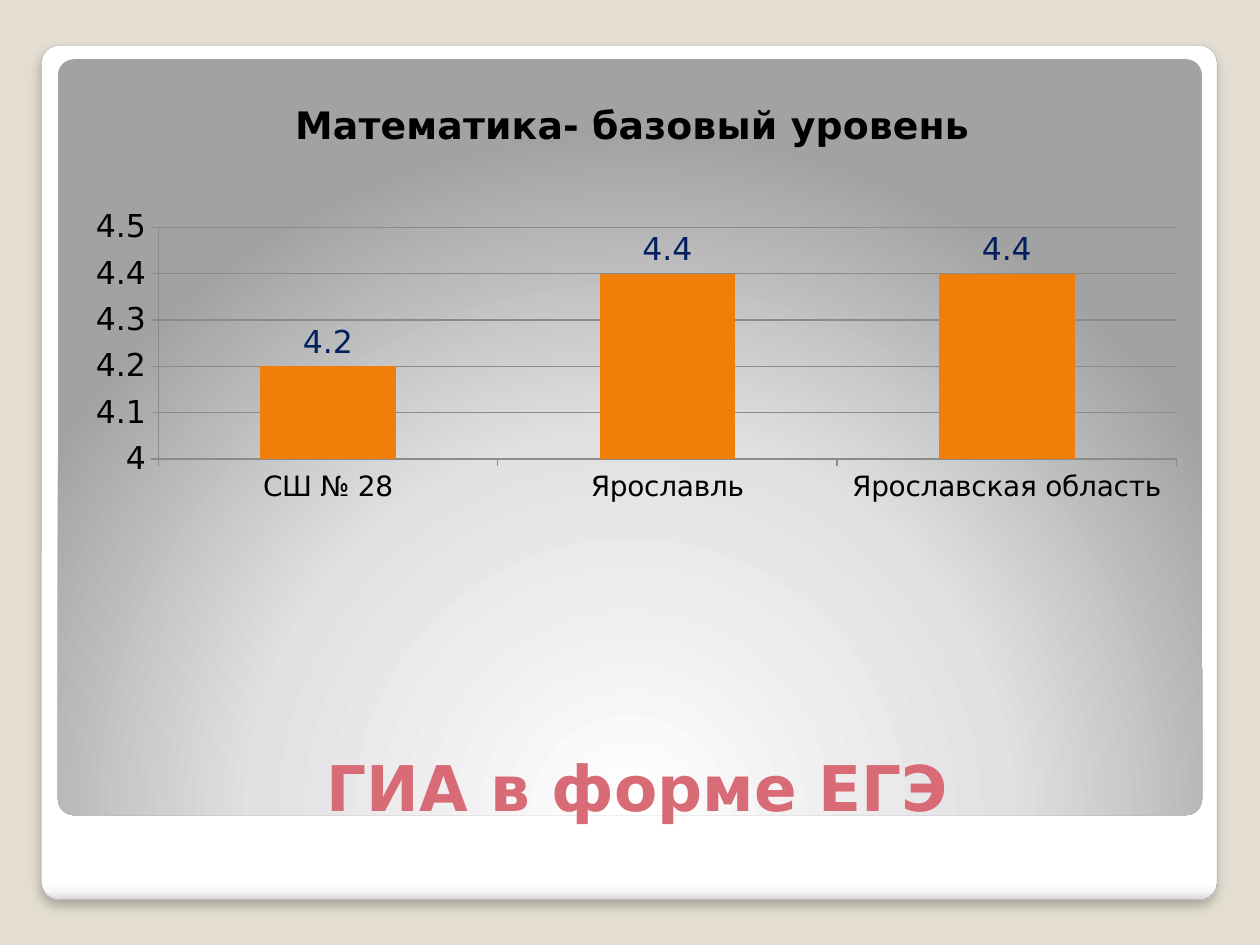
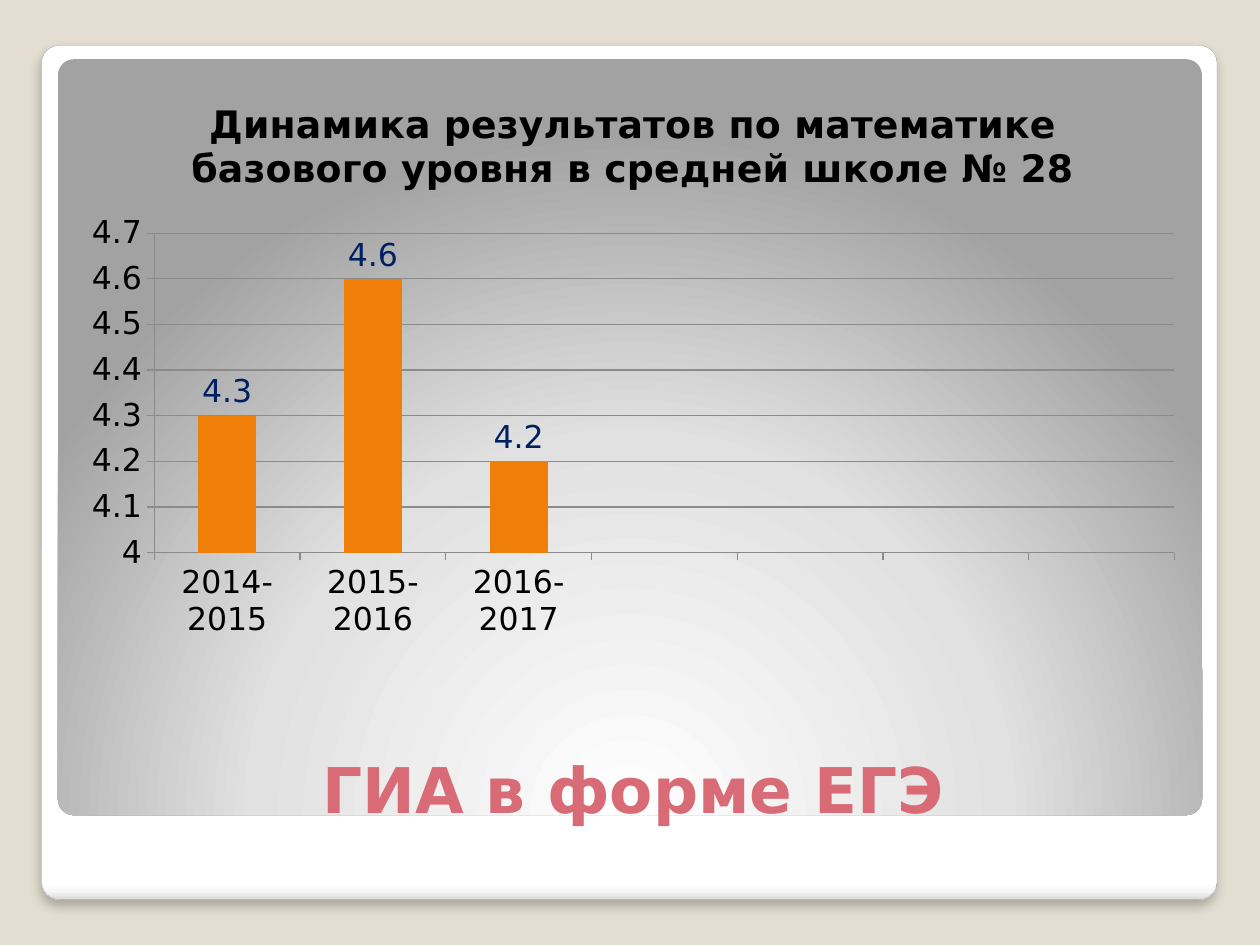
from dataclasses import dataclass
from typing import Optional

from lxml import etree
from pptx import Presentation
from pptx.chart.chart import Chart
from pptx.chart.data import CategoryChartData
from pptx.dml.color import RGBColor
from pptx.enum.chart import XL_CHART_TYPE, XL_LABEL_POSITION, XL_TICK_MARK
from pptx.enum.shapes import MSO_SHAPE
from pptx.enum.text import MSO_ANCHOR, PP_ALIGN
from pptx.oxml import parse_xml
from pptx.oxml.ns import nsdecls, qn
from pptx.presentation import Presentation as Deck
from pptx.shapes.autoshape import Shape
from pptx.slide import Slide
from pptx.util import Inches, Pt

ROUNDED = MSO_SHAPE.ROUNDED_RECTANGLE
COLUMNS = XL_CHART_TYPE.COLUMN_CLUSTERED
OUTSIDE_END = XL_LABEL_POSITION.OUTSIDE_END
TICK_OUTSIDE = XL_TICK_MARK.OUTSIDE
BOTTOM = MSO_ANCHOR.BOTTOM
CENTER = PP_ALIGN.CENTER

FONT = "DejaVu Sans"
SLIDE_TITLE = "ГИА в форме ЕГЭ"
COLORS = {
    "background": "E3DED1",
    "white": "FFFFFF",
    "edge_light": "F7F7F7",
    "edge_dark": "DADADA",
    "outline": "A4A4A4",
    "panel_middle": "E1E1E1",
    "panel_dark": "A2A2A2",
    "title": "D96B77",
    "text": "000000",
    "bar": "F07F09",
    "value": "002060",
    "grid": "8B8B8B",
}
LINEAR_DOWN = '<a:lin ang="5400000" scaled="0"/>'
RADIAL_FROM_BELOW = (
    '<a:path path="circle">'
    '<a:fillToRect l="50000" t="175000" r="50000" b="-75000"/></a:path>'
)


@dataclass(frozen=True)
class Box:
    left: float
    top: float
    width: float
    height: float

    def lengths(self) -> tuple[Inches, Inches, Inches, Inches]:
        return (Inches(self.left), Inches(self.top),
                Inches(self.width), Inches(self.height))


@dataclass(frozen=True)
class Panel:
    box: Box
    stops: tuple[tuple[int, str], ...]
    direction: str
    raised: bool


@dataclass(frozen=True)
class ResultSlide:
    title_box: Box
    chart_box: Box
    chart_title: str
    categories: tuple[str, ...]
    values: tuple[Optional[float], ...]
    maximum: float
    category_size: int
    plot_area: Optional[Box] = None


PANELS = (
    Panel(Box(0.33, 0.36, 9.33, 6.78),
          ((0, "white"), (98, "white"), (99, "edge_light"), (100, "edge_dark")),
          LINEAR_DOWN, True),
    Panel(Box(0.46, 0.47, 9.08, 6),
          ((0, "white"), (55, "panel_middle"), (100, "panel_dark")),
          RADIAL_FROM_BELOW, False),
)
RESULT_SLIDES = (
    ResultSlide(
        Box(0.55, 5.64, 9.02, 0.94), Box(0.55, 0.58, 8.94, 5.3),
        "Математика- базовый уровень",
        ("СШ № 28", "Ярославль", "Ярославская область"),
        (4.2, 4.4, 4.4), 4.5, 16, Box(0.079, 0.231, 0.904, 0.347),
    ),
    ResultSlide(
        Box(0.55, 5.45, 8.95, 1.15), Box(0.55, 0.58, 8.95, 4.58),
        "Динамика результатов по математике базового уровня в средней школе № 28",
        ("2014-2015", "2015-2016", "2016-2017"),
        (4.3, 4.6, 4.2, None, None, None, None), 4.7, 18,
    ),
)


def color(name: str) -> RGBColor:
    return RGBColor.from_string(COLORS[name])


def set_gradient(shape: Shape, panel: Panel) -> None:
    stops = "".join(
        f'<a:gs pos="{position * 1000}"><a:srgbClr val="{COLORS[name]}"/></a:gs>'
        for position, name in panel.stops
    )
    gradient = parse_xml(
        f'<a:gradFill {nsdecls("a")} rotWithShape="1"><a:gsLst>{stops}</a:gsLst>'
        f'{panel.direction}</a:gradFill>'
    )
    shape.fill.background()
    properties = shape.element.spPr
    properties.replace(properties.find(qn("a:noFill")), gradient)


def add_shadow(shape: Shape) -> None:
    effects = shape.element.spPr.find(qn("a:effectLst"))
    shadow = etree.SubElement(
        effects, qn("a:outerShdw"), blurRad=str(Pt(6)), dist=str(Pt(4)),
        dir="5400000", algn="tl", rotWithShape="0",
    )
    tint = etree.SubElement(shadow, qn("a:srgbClr"), val=COLORS["text"])
    etree.SubElement(tint, qn("a:alpha"), val="25000")


def add_panel(slide: Slide, panel: Panel) -> None:
    shape = slide.shapes.add_shape(ROUNDED, *panel.box.lengths())
    shape.adjustments[0] = 0.021
    set_gradient(shape, panel)
    shape.shadow.inherit = False
    if panel.raised:
        shape.line.color.rgb = color("outline")
        shape.line.width = Pt(0.16)
        add_shadow(shape)
    else:
        shape.line.fill.background()


def add_title(slide: Slide, box: Box) -> None:
    frame = slide.shapes.add_textbox(*box.lengths()).text_frame
    frame.word_wrap = True
    frame.vertical_anchor = BOTTOM
    frame.margin_bottom = Inches(0.04)
    paragraph = frame.paragraphs[0]
    paragraph.alignment = CENTER
    run = paragraph.add_run()
    run.text = SLIDE_TITLE
    run.font.name = FONT
    run.font.size = Pt(36)
    run.font.bold = True
    run.font.color.rgb = color("title")


def set_plot_area(chart: Chart, area: Box) -> None:
    plot_area = chart.element.find(".//" + qn("c:plotArea"))
    for old_layout in plot_area.findall(qn("c:layout")):
        plot_area.remove(old_layout)
    plot_area.insert(0, parse_xml(
        f'<c:layout {nsdecls("c")}><c:manualLayout>'
        '<c:layoutTarget val="inner"/><c:xMode val="edge"/><c:yMode val="edge"/>'
        f'<c:x val="{area.left}"/><c:y val="{area.top}"/>'
        f'<c:w val="{area.width}"/><c:h val="{area.height}"/>'
        '</c:manualLayout></c:layout>'
    ))


def style_axes(chart: Chart, result: ResultSlide) -> None:
    sizes = ((chart.category_axis, result.category_size), (chart.value_axis, 18))
    for axis, size in sizes:
        axis.major_tick_mark = TICK_OUTSIDE
        axis.format.line.color.rgb = color("grid")
        axis.tick_labels.font.size = Pt(size)
    value_axis = chart.value_axis
    value_axis.minimum_scale = 4
    value_axis.maximum_scale = result.maximum
    value_axis.major_unit = 0.1
    value_axis.major_gridlines.format.line.color.rgb = color("grid")


def add_result_chart(slide: Slide, result: ResultSlide) -> None:
    data = CategoryChartData()
    data.categories = result.categories
    data.add_series("Series 1", result.values)
    chart = slide.shapes.add_chart(COLUMNS, *result.chart_box.lengths(), data).chart
    chart.has_legend = False
    chart.font.name = FONT
    chart.font.size = Pt(18)
    chart.font.color.rgb = color("text")

    run = chart.chart_title.text_frame.paragraphs[0].add_run()
    run.text = result.chart_title
    run.font.name = FONT
    run.font.size = Pt(21.6)
    run.font.bold = True
    run.font.color.rgb = color("text")

    plot = chart.plots[0]
    plot.gap_width = 150
    plot.vary_by_categories = False
    series = plot.series[0]
    series.format.fill.solid()
    series.format.fill.fore_color.rgb = color("bar")
    labels = series.data_labels
    labels.show_value = True
    labels.position = OUTSIDE_END
    labels.font.name = FONT
    labels.font.size = Pt(18)
    labels.font.color.rgb = color("value")
    style_axes(chart, result)
    if result.plot_area:
        set_plot_area(chart, result.plot_area)


def add_result_slide(presentation: Deck, result: ResultSlide) -> None:
    slide = presentation.slides.add_slide(presentation.slide_layouts[6])
    slide.background.fill.solid()
    slide.background.fill.fore_color.rgb = color("background")
    for panel in PANELS:
        add_panel(slide, panel)
    add_title(slide, result.title_box)
    add_result_chart(slide, result)


def main() -> None:
    presentation = Presentation()
    presentation.slide_width = Inches(10)
    presentation.slide_height = Inches(7.5)
    for result in RESULT_SLIDES:
        add_result_slide(presentation, result)
    presentation.save("out.pptx")


if __name__ == "__main__":
    main()
